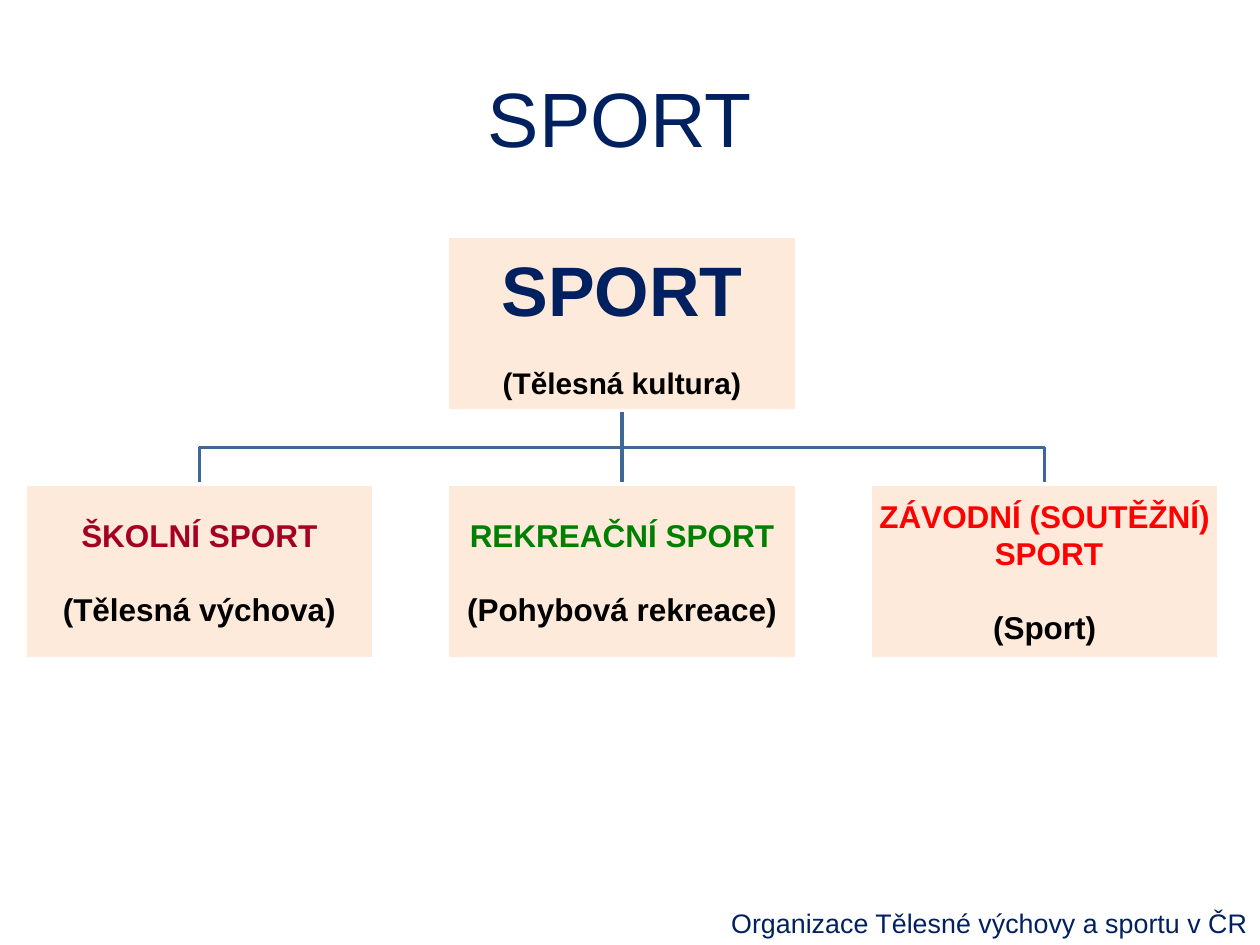
"""Build a slide with a chart of the three branches of sport."""
from lxml.etree import SubElement
from pptx import Presentation
from pptx.dml.color import RGBColor
from pptx.enum.shapes import MSO_CONNECTOR as Connector, MSO_SHAPE as Shape
from pptx.enum.text import MSO_ANCHOR as Anchor, PP_ALIGN as Align
from pptx.oxml.ns import qn
from pptx.util import Cm, Pt

NAVY = RGBColor(0x00, 0x20, 0x60)
BLACK = RGBColor(0x00, 0x00, 0x00)
WHITE = RGBColor(0xFF, 0xFF, 0xFF)
PEACH = RGBColor(0xFD, 0xEA, 0xDA)
STEEL = RGBColor(0x3F, 0x67, 0x97)
CRIMSON = RGBColor(0xA5, 0x00, 0x21)
GREEN = RGBColor(0x00, 0x80, 0x00)
RED = RGBColor(0xFF, 0x00, 0x00)

TITLE = "SPORT "
FOOTER = "Organizace Tělesné výchovy a sportu v ČR"
ROOT = (["SPORT"], "(Tělesná kultura)", NAVY, 40, 17)
BRANCHES = [
    (["ŠKOLNÍ SPORT"], "(Tělesná výchova)", CRIMSON, 18, 18),
    (["REKREAČNÍ SPORT"], "(Pohybová rekreace)", GREEN, 18, 18),
    (["ZÁVODNÍ (SOUTĚŽNÍ)", " SPORT"], "(Sport)", RED, 18, 18),
]

BOX_WIDTH, BOX_HEIGHT = Cm(7.04), Cm(3.52)
LEFT, STEP = Cm(0.5), Cm(8.52)
ROOT_TOP, BRANCH_TOP = Cm(4.76), Cm(9.76)
LINE_HEIGHT = 1.15


def style(para, size, color, align=Align.CENTER, bold=False):
    para.alignment = align
    para.font.name = "Arial"
    para.font.size = Pt(size)
    para.font.bold = bold
    para.font.color.rgb = color


def add_box(page, left, top, node):
    names, note, color, name_size, note_size = node
    box = page.shapes.add_shape(Shape.RECTANGLE, left, top, BOX_WIDTH, BOX_HEIGHT)
    box.shadow.inherit = False
    box.fill.solid()
    box.fill.fore_color.rgb = PEACH
    box.line.color.rgb = WHITE
    box.line.width = Pt(2)
    frame = box.text_frame
    frame.word_wrap = True
    frame.vertical_anchor = Anchor.MIDDLE
    frame.margin_left = frame.margin_right = Cm(0.03)
    frame.margin_top = frame.margin_bottom = Cm(0.03)
    frame.text = "\n".join(names + [note])
    for para in frame.paragraphs[:-1]:
        style(para, name_size, color, bold=True)
    last = frame.paragraphs[-1]
    style(last, note_size, BLACK, bold=True)
    last.space_before = Pt(round(note_size * LINE_HEIGHT, 1))


def add_link(page, start, end):
    (start_x, start_y), (end_x, end_y) = start, end
    if start_x == end_x:
        link = page.shapes.add_connector(Connector.STRAIGHT, *start, *end)
        SubElement(link.element.spPr, qn("a:effectLst"))
    else:
        middle = (start_y + end_y) // 2
        builder = page.shapes.build_freeform(*start)
        builder.add_line_segments([(start_x, middle), (end_x, middle), end], close=False)
        link = builder.convert_to_shape()
        link.shadow.inherit = False
        link.fill.background()
    link.line.color.rgb = STEEL
    link.line.width = Pt(2)


def main():
    deck = Presentation()
    deck.slide_width, deck.slide_height = Cm(25.4), Cm(19.05)
    page = deck.slides.add_slide(deck.slide_layouts[5])

    title = page.shapes.title
    title.left, title.top, title.width, title.height = Cm(1.27), Cm(0.76), Cm(22.86), Cm(3.18)
    title.text_frame.text = TITLE
    title.text_frame.vertical_anchor = Anchor.MIDDLE
    style(title.text_frame.paragraphs[0], 44, NAVY)

    footer = page.shapes.add_textbox(Cm(13.41), Cm(18.16), Cm(11.99), Cm(0.86))
    footer.text_frame.word_wrap = True
    footer.text_frame.text = FOOTER
    style(footer.text_frame.paragraphs[0], 15.3, NAVY, Align.RIGHT)

    lefts = [LEFT + STEP * column for column in range(len(BRANCHES))]
    root_left = lefts[len(lefts) // 2]
    half = BOX_WIDTH // 2
    for left in lefts:
        add_link(page, (root_left + half, ROOT_TOP + BOX_HEIGHT), (left + half, BRANCH_TOP))
    add_box(page, root_left, ROOT_TOP, ROOT)
    for left, branch in zip(lefts, BRANCHES):
        add_box(page, left, BRANCH_TOP, branch)

    deck.save("out.pptx")


if __name__ == "__main__":
    main()
